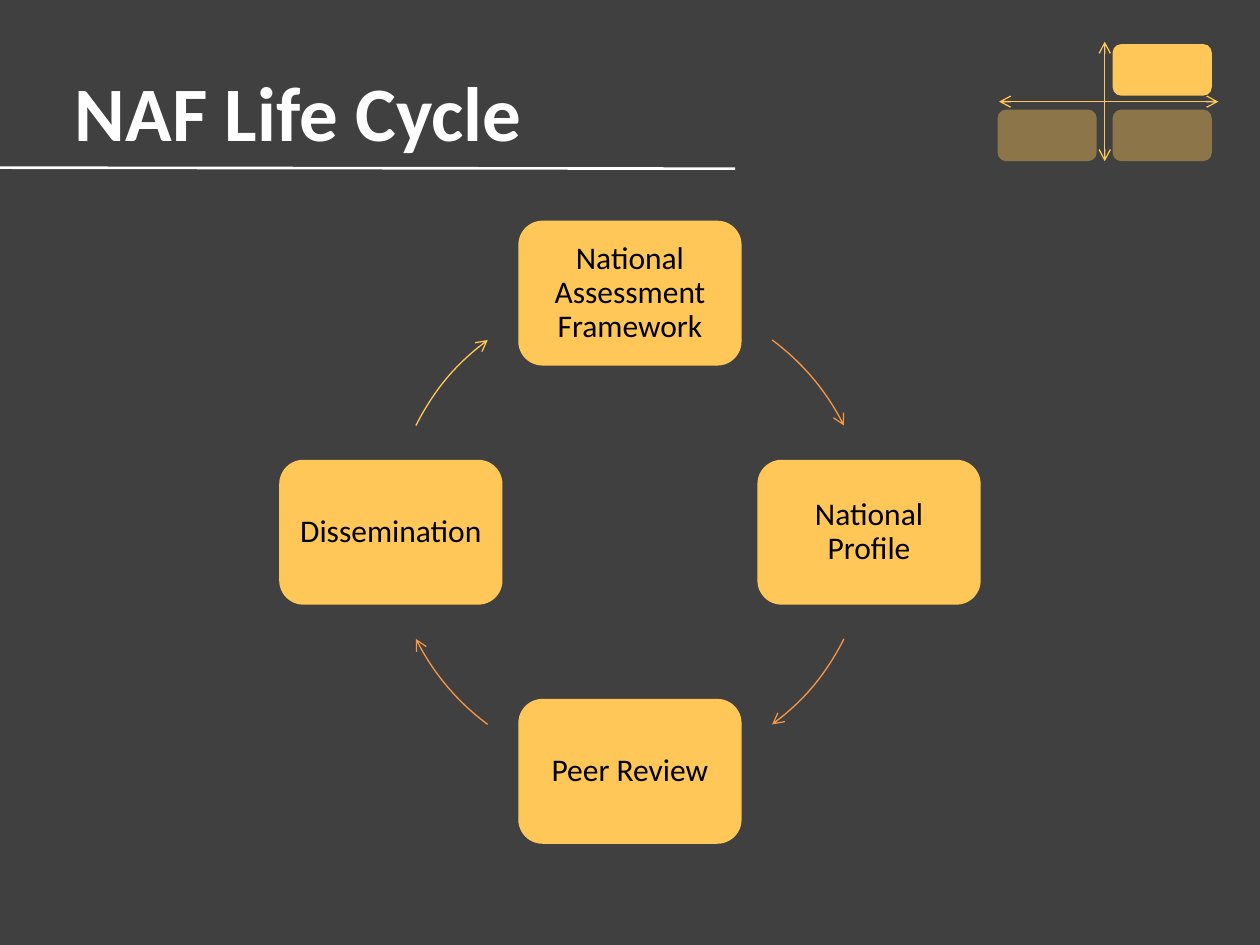
from lxml import etree
from pptx import Presentation
from pptx.dml.color import RGBColor
from pptx.enum import shapes, text
from pptx.oxml.ns import qn
from pptx.util import Cm, Pt

CHARCOAL = RGBColor(0x40, 0x40, 0x40)
AMBER = RGBColor(0xFF, 0xC7, 0x58)
ORANGE = RGBColor(0xF7, 0x96, 0x46)
WHITE = RGBColor(0xFF, 0xFF, 0xFF)
BLACK = RGBColor(0, 0, 0)
FONT = "Calibri"

# Clockwise from the top: label, direction from the centre, arc to the next
# stage (start and end in degrees, clockwise from the right), arc colour
STAGES = [
    ("National Assessment Framework", (0, -1), (306.5, 333.5), ORANGE),
    ("National Profile", (1, 0), (26.5, 53.5), ORANGE),
    ("Peer Review", (0, 1), (126.5, 153.5), ORANGE),
    ("Dissemination", (-1, 0), (206.5, 233.5), AMBER),
]


def style_line(sp, color, width, *ends):
    """Colour a line and put open arrowheads on the given ends."""
    sp.line.color.rgb = color
    sp.line.width = Pt(width)
    ln = sp.line._get_or_add_ln()
    for end in ends:
        etree.SubElement(ln, qn(f"a:{end}"), type="arrow")


def add_line(parent, x1, y1, x2, y2, color, width, *ends):
    line = parent.add_connector(shapes.MSO_CONNECTOR.STRAIGHT,
                                Cm(x1), Cm(y1), Cm(x2), Cm(y2))
    style_line(line, color, width, *ends)
    etree.SubElement(line._element.spPr, qn("a:effectLst"))


def add_tile(parent, x, y, w, h, opacity=100):
    sp = parent.add_shape(shapes.MSO_SHAPE.ROUNDED_RECTANGLE,
                          Cm(x), Cm(y), Cm(w), Cm(h))
    sp.shadow.inherit = False
    sp.fill.solid()
    sp.fill.fore_color.rgb = AMBER
    sp.line.fill.background()
    if opacity < 100:
        color = sp._element.spPr.find(qn("a:solidFill"))[0]
        etree.SubElement(color, qn("a:alpha"), val=str(opacity * 1000))
    return sp


def add_stage(parent, label, x, y, w, h):
    tf = add_tile(parent, x, y, w, h).text_frame
    tf.word_wrap = True
    tf.vertical_anchor = text.MSO_ANCHOR.MIDDLE
    tf.margin_left = tf.margin_right = Cm(0.18)
    tf.margin_top = tf.margin_bottom = Cm(0.18)
    p = tf.paragraphs[0]
    p.text = label
    p.alignment = text.PP_ALIGN.CENTER
    p.line_spacing = 0.9
    p.font.name, p.font.size, p.font.color.rgb = FONT, Pt(18), BLACK


def add_arc(parent, cx, cy, radius, angles, color):
    sp = parent.add_shape(shapes.MSO_SHAPE.ARC, Cm(cx - radius),
                          Cm(cy - radius), Cm(2 * radius), Cm(2 * radius))
    sp.shadow.inherit = False
    sp.fill.background()
    for i, degrees in enumerate(angles):
        sp.adjustments[i] = degrees * 0.6  # 60000 units a degree, over 100000
    style_line(sp, color, 0.75, "tailEnd")


def add_cycle(slide, x, y, w, h):
    node_w, node_h = 4.5, 2.92
    radius = (h - node_h) / 2
    cx, cy = x + w / 2, y + h / 2
    group = slide.shapes.add_group_shape().shapes
    for label, (dx, dy), angles, color in STAGES:
        add_stage(group, label, cx + dx * radius - node_w / 2,
                  cy + dy * radius - node_h / 2, node_w, node_h)
        add_arc(group, cx, cy, radius, angles, color)


def add_quadrant_emblem(slide, x, y, w, h):
    """Crossed axes with three quadrants, the upper right one highlighted."""
    tile_w, tile_h = 2, 1.04
    axis_x, axis_y = x + 2.16, y + 1.21
    left, right = x, x + 2.32
    top, bottom = y + 0.05, y + h - tile_h
    group = slide.shapes.add_group_shape().shapes
    ends = ("headEnd", "tailEnd")
    add_line(group, axis_x, y, axis_x, y + h, AMBER, 0.75, *ends)
    add_line(group, x + 0.03, axis_y, x + w, axis_y, AMBER, 0.75, *ends)
    for tx, ty, opacity in ((right, top, 100), (right, bottom, 40),
                            (left, bottom, 40)):
        add_tile(group, tx, ty, tile_w, tile_h, opacity)


def set_title(slide, x, y, w, h):
    title = slide.shapes.title
    title.left, title.top, title.width, title.height = map(Cm, (x, y, w, h))
    tf = title.text_frame
    tf.vertical_anchor = text.MSO_ANCHOR.MIDDLE
    p = tf.paragraphs[0]
    p.text = "NAF Life Cycle"
    p.alignment = text.PP_ALIGN.CENTER
    p.font.name, p.font.size, p.font.bold = FONT, Pt(44), True
    p.font.color.rgb = WHITE


def main():
    prs = Presentation()
    prs.slide_width, prs.slide_height = Cm(25.4), Cm(19.05)
    slide = prs.slides.add_slide(prs.slide_layouts[5])
    slide.background.fill.solid()
    slide.background.fill.fore_color.rgb = CHARCOAL
    add_cycle(slide, 5.63, 4.45, 14.14, 12.56)
    add_quadrant_emblem(slide, 20.11, 0.84, 4.45, 2.41)
    set_title(slide, -1.7, 0.64, 15.44, 3.18)
    add_line(slide.shapes, 0, 3.38, 14.82, 3.4, WHITE, 1.5)
    prs.save("out.pptx")


if __name__ == "__main__":
    main()
